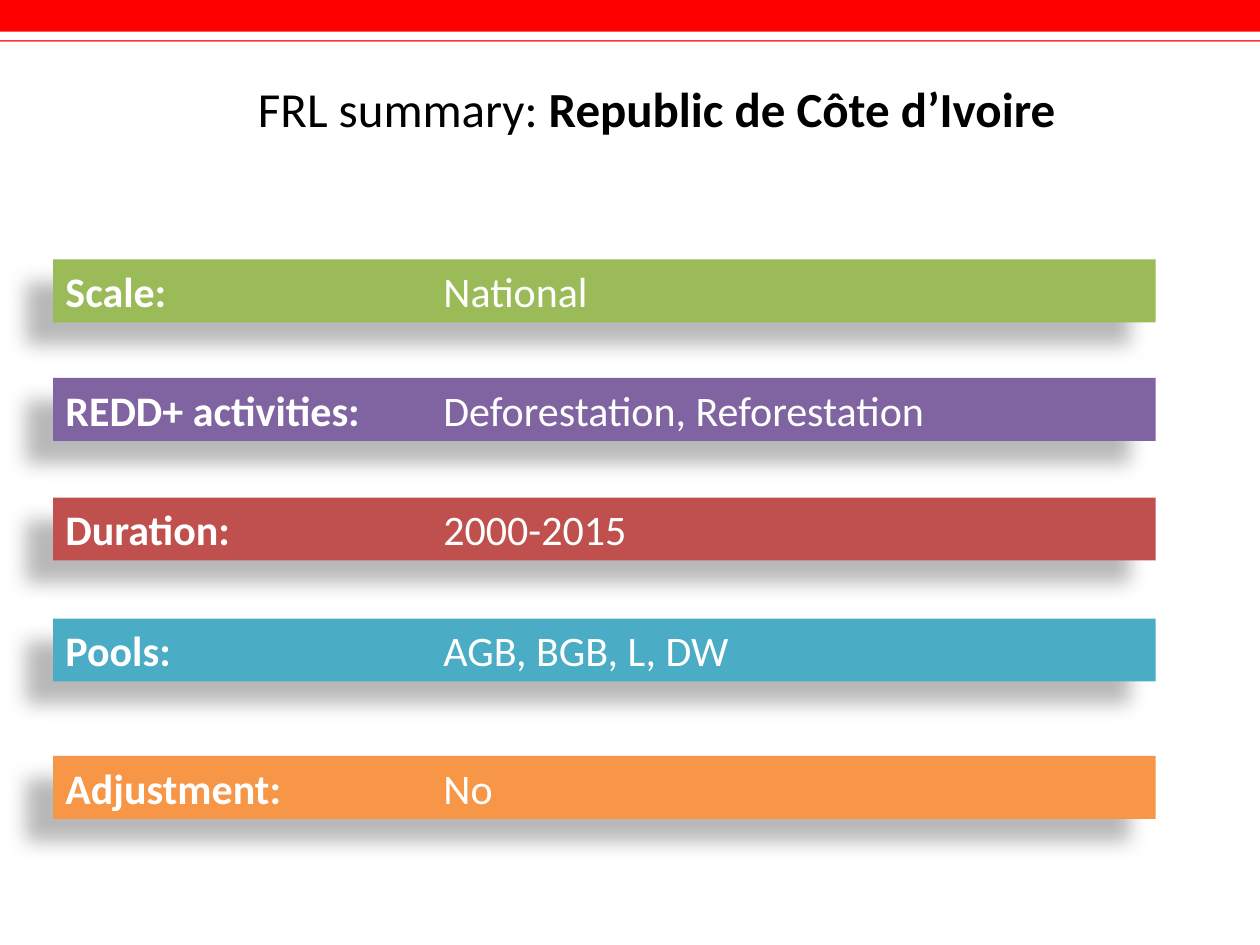
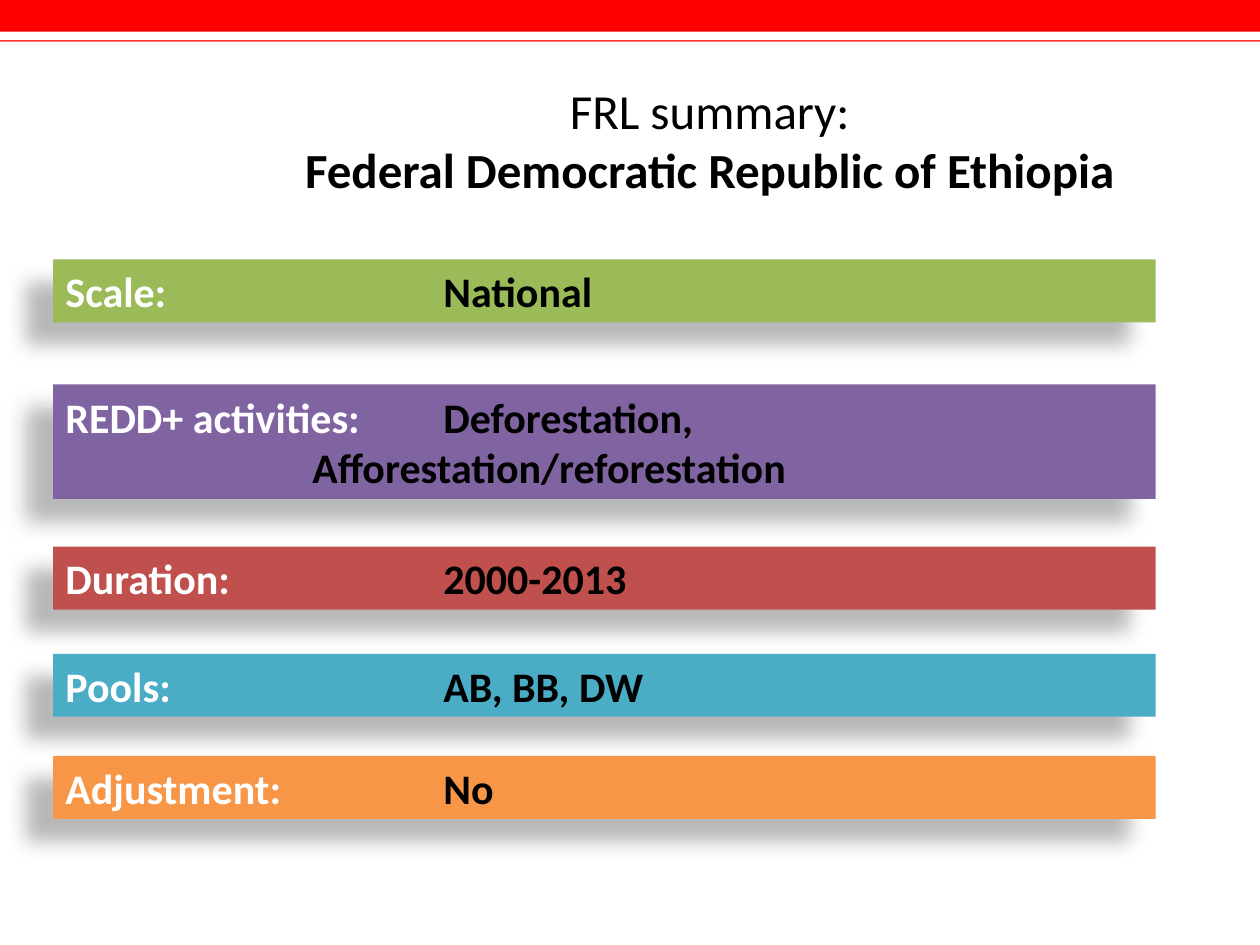
from lxml import etree
from pptx import Presentation
from pptx.dml.color import RGBColor
from pptx.enum.shapes import MSO_SHAPE
from pptx.enum.text import MSO_ANCHOR, PP_ALIGN
from pptx.oxml.ns import qn
from pptx.util import Cm, Pt

RECTANGLE = MSO_SHAPE.RECTANGLE
LEFT, CENTER, MIDDLE = PP_ALIGN.LEFT, PP_ALIGN.CENTER, MSO_ANCHOR.MIDDLE

FONT = "Calibri"
WHITE, BLACK = "FFFFFF", "000000"
BAND, RULE = "FF0000", "FF3333"
TITLE_SIZE, BAR_SIZE = 28, 24
SLIDE_W, SLIDE_H = 25.4, 19.05
TITLE_W, TITLE_H = 21.39, 2.67
BAR_LEFT, BAR_W, BAR_H = 1.07, 22.23, 1.27
EXTRA_LINE_H = 1.04
VALUE_TAB, CONTINUATION_INDENT = 7.62, 4.98

TOPICS = [
    ("Scale:", "9BBB59"),
    ("REDD+ activities:", "8064A2"),
    ("Duration:", "C0504D"),
    ("Pools:", "4BACC6"),
    ("Adjustment:", "F79646"),
]

COUNTRIES = [
    {
        "country": "Republic de Côte d’Ivoire",
        "title_at": (2.54, 0.84),
        "two_line_title": False,
        "value_style": (WHITE, False),
        "tops": [5.23, 7.62, 10.03, 12.47, 15.24],
        "values": ["National", "Deforestation, Reforestation", "2000-2015",
                   "AGB, BGB, L, DW", "No"],
    },
    {
        "country": "Federal Democratic Republic of Ethiopia",
        "title_at": (3.61, 1.47),
        "two_line_title": True,
        "value_style": (BLACK, True),
        "tops": [5.23, 7.75, 11.02, 13.18, 15.24],
        "values": ["National", "Deforestation,\nAfforestation/reforestation",
                   "2000-2013", "AB, BB, DW", "No"],
    },
]


def rgb(color):
    return RGBColor.from_string(color)


def style_run(run, size, color, bold):
    run.font.name = FONT
    run.font.size = Pt(size)
    run.font.bold = bold
    run.font.color.rgb = rgb(color)


def add_rectangle(slide, box, color):
    rectangle = slide.shapes.add_shape(RECTANGLE, *map(Cm, box))
    rectangle.fill.solid()
    rectangle.fill.fore_color.rgb = rgb(color)
    rectangle.line.fill.background()
    rectangle.shadow.inherit = False
    return rectangle


def cast_shadow(shape):
    """Give the shape a soft black shadow towards the lower left."""
    effects = shape.element.spPr.find(qn("a:effectLst"))
    shadow = etree.SubElement(
        effects, qn("a:outerShdw"), blurRad=str(Pt(11.8)), dist=str(Pt(19.7)),
        dir=str(141 * 60000), algn="tl", rotWithShape="0")
    color = etree.SubElement(shadow, qn("a:srgbClr"), val=BLACK)
    etree.SubElement(color, qn("a:alpha"), val="28000")


def set_up_master(master, slide):
    """Set the title size and move the top bands, drawn on slide, to the master."""
    title_font = master.element.xpath("p:txStyles/p:titleStyle//a:defRPr")[0]
    title_font.set("sz", str(TITLE_SIZE * 100))
    bands = [((0, 0, SLIDE_W, 0.64), BAND), ((0, 0.81, SLIDE_W, 0.03), RULE)]
    for number, (box, color) in enumerate(bands):
        band = add_rectangle(slide, box, color).element
        band.nvSpPr.cNvPr.set("id", str(100 + number))
        master.shapes.element.insert(2 + number, band)


def fill_title(title, left, top, country, two_lines):
    title.left, title.top = Cm(left), Cm(top)
    title.width, title.height = Cm(TITLE_W), Cm(TITLE_H)
    title.text_frame.vertical_anchor = MIDDLE
    heading = title.text_frame.paragraphs[0]
    heading.alignment = CENTER
    lead = heading.add_run()
    lead.text = "FRL summary:" if two_lines else "FRL summary: "
    if two_lines:
        heading.add_line_break()
    name = heading.add_run()
    name.text = country
    style_run(lead, TITLE_SIZE, BLACK, False)
    style_run(name, TITLE_SIZE, BLACK, True)


def add_value_tab(paragraph):
    tabs = etree.SubElement(paragraph._p.get_or_add_pPr(), qn("a:tabLst"))
    etree.SubElement(tabs, qn("a:tab"), pos=str(Cm(VALUE_TAB)), algn="l")


def add_topic_bar(slide, top, topic, color, value, value_style):
    first_line, *more_lines = value.split("\n")
    height = BAR_H + EXTRA_LINE_H * len(more_lines)
    bar = add_rectangle(slide, (BAR_LEFT, top, BAR_W, height), color)
    cast_shadow(bar)
    frame = bar.text_frame
    frame.word_wrap = True
    frame.vertical_anchor = MIDDLE

    row = frame.paragraphs[0]
    row.alignment = LEFT
    add_value_tab(row)
    for text, style in [(topic + "\t", (WHITE, True)), (first_line, value_style)]:
        run = row.add_run()
        run.text = text
        style_run(run, BAR_SIZE, *style)

    for line in more_lines:
        continuation = frame.add_paragraph()
        continuation.text = line
        continuation.alignment = LEFT
        indent = continuation._p.get_or_add_pPr()
        indent.set("marL", str(Cm(CONTINUATION_INDENT)))
        style_run(continuation.runs[0], BAR_SIZE, *value_style)


def add_summary_slide(prs, summary):
    slide = prs.slides.add_slide(prs.slide_layouts.get_by_name("Title Only"))
    fill_title(slide.shapes.title, *summary["title_at"], summary["country"],
               summary["two_line_title"])
    for (topic, color), top, value in zip(TOPICS, summary["tops"], summary["values"]):
        add_topic_bar(slide, top, topic, color, value, summary["value_style"])
    return slide


def main():
    prs = Presentation()
    prs.slide_width, prs.slide_height = Cm(SLIDE_W), Cm(SLIDE_H)
    slides = [add_summary_slide(prs, summary) for summary in COUNTRIES]
    set_up_master(prs.slide_master, slides[0])
    prs.save("out.pptx")


if __name__ == "__main__":
    main()
